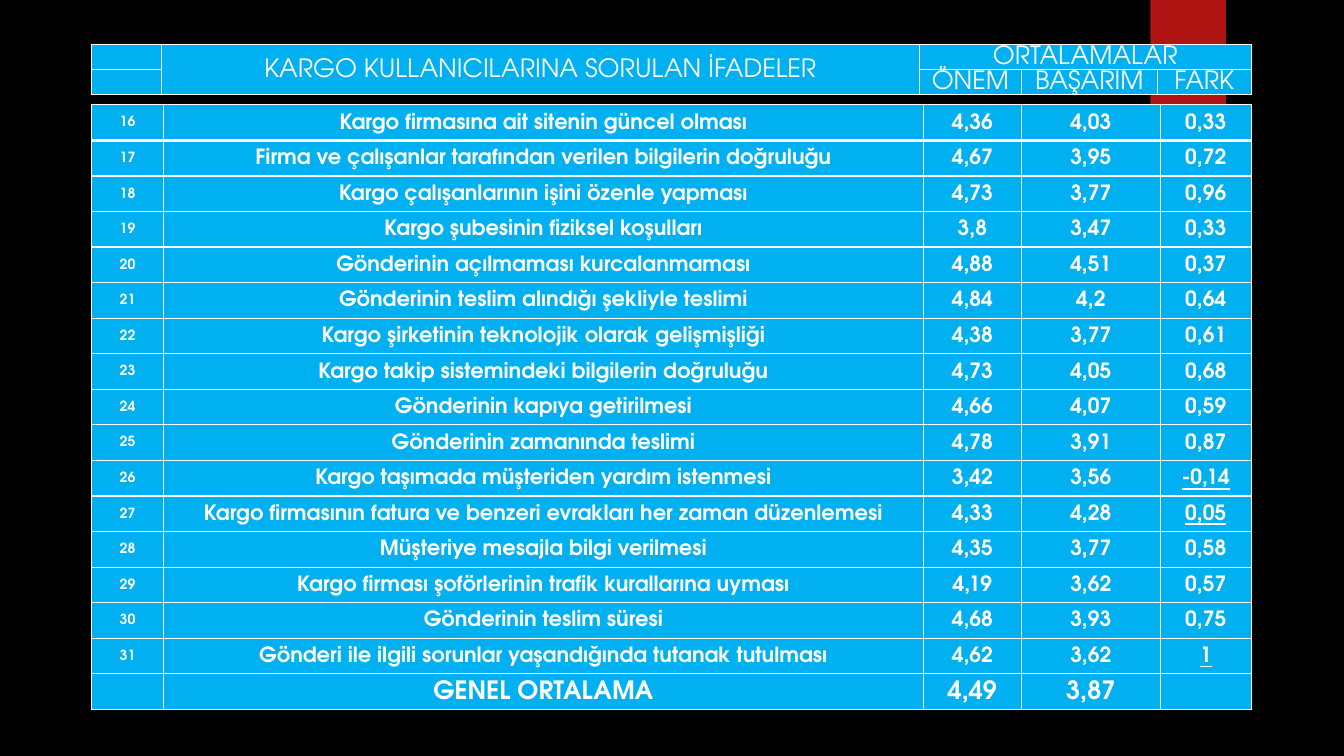
from lxml import etree
from pptx import Presentation
from pptx.dml.color import RGBColor
from pptx.enum import shapes, text
from pptx.oxml import parse_xml
from pptx.oxml.ns import nsdecls, qn
from pptx.util import Inches, Pt

BLACK = RGBColor(0x00, 0x00, 0x00)
WHITE = RGBColor(0xFF, 0xFF, 0xFF)
RED = RGBColor(0xB0, 0x15, 0x13)
BLUE = RGBColor(0x00, 0xB0, 0xF0)
TEAL = RGBColor(0x50, 0xB9, 0xC1)
FONT = "TeX Gyre Adventor"

BODY_COLS = [0.71, 7.54, 0.97, 1.38, 0.9]
HEAD_COLS = [0.69, 7.52, 1.01, 1.35, 0.93]
FIRST_NUMBER = 16
STATEMENTS = [
    ("Kargo firmasına ait sitenin güncel olması", "4,36", "4,03", "0,33"),
    ("Firma ve çalışanlar tarafından verilen bilgilerin doğruluğu", "4,67", "3,95", "0,72"),
    ("Kargo çalışanlarının işini özenle yapması", "4,73", "3,77", "0,96"),
    ("Kargo şubesinin fiziksel koşulları", "3,8", "3,47", "0,33"),
    ("Gönderinin açılmaması kurcalanmaması", "4,88", "4,51", "0,37"),
    ("Gönderinin teslim alındığı şekliyle teslimi", "4,84", "4,2", "0,64"),
    ("Kargo şirketinin teknolojik olarak gelişmişliği", "4,38", "3,77", "0,61"),
    ("Kargo takip sistemindeki bilgilerin doğruluğu", "4,73", "4,05", "0,68"),
    ("Gönderinin kapıya getirilmesi", "4,66", "4,07", "0,59"),
    ("Gönderinin zamanında teslimi", "4,78", "3,91", "0,87"),
    ("Kargo taşımada müşteriden yardım istenmesi", "3,42", "3,56", "-0,14"),
    ("Kargo firmasının fatura ve benzeri evrakları her zaman düzenlemesi", "4,33", "4,28", "0,05"),
    ("Müşteriye mesajla bilgi verilmesi", "4,35", "3,77", "0,58"),
    ("Kargo firması şoförlerinin trafik kurallarına uyması", "4,19", "3,62", "0,57"),
    ("Gönderinin teslim süresi", "4,68", "3,93", "0,75"),
    ("Gönderi ile ilgili sorunlar yaşandığında tutanak tutulması", "4,62", "3,62", "1"),
]
OVERALL = ("", "GENEL ORTALAMA", "4,49", "3,87", "")
UNDERLINED = {"-0,14", "0,05", "1"}


def set_borders(cell, bottom=1):
    tc_pr = cell._tc.get_or_add_tcPr()
    widths = {"lnL": 1, "lnR": 1, "lnT": 1, "lnB": bottom}
    for i, (side, width) in enumerate(widths.items()):
        ln = etree.Element(qn("a:" + side), w=str(Pt(width)))
        fill = etree.SubElement(ln, qn("a:solidFill"))
        etree.SubElement(fill, qn("a:srgbClr"), val=str(WHITE))
        tc_pr.insert(i, ln)


def style_cell(cell, words, size, bold=False, after=0, bottom=1):
    cell.fill.solid()
    cell.fill.fore_color.rgb = BLUE
    set_borders(cell, bottom)
    cell.vertical_anchor = text.MSO_ANCHOR.MIDDLE
    cell.margin_left = cell.margin_right = Inches(0.05)
    cell.margin_top = cell.margin_bottom = 0
    p = cell.text_frame.paragraphs[0]
    p.alignment = text.PP_ALIGN.CENTER
    p.line_spacing = 1.07
    p.space_after = Pt(after)
    if not words:
        p.font.size = Pt(10)
        return
    p.text = words
    font = p.runs[0].font
    font.name, font.size, font.bold = FONT, Pt(size), bold
    font.color.rgb = WHITE
    if words in UNDERLINED:
        font.underline = True


def add_grid(slide, left, top, height, cols, row_count):
    table = slide.shapes.add_table(row_count, len(cols), Inches(left), Inches(top),
                                   Inches(sum(cols)), Inches(height)).table
    table.first_row = table.horz_banding = False
    for column, width in zip(table.columns, cols):
        column.width = Inches(width)
    for row in table.rows:
        row.height = Inches(height / row_count)
    return table


def add_backdrop(slide):
    slide.background.fill.solid()
    slide.background.fill.fore_color.rgb = BLACK

    # Faint round glow
    glow = slide.shapes.add_shape(shapes.MSO_SHAPE.OVAL, Inches(9.41), Inches(1.83),
                                  Inches(3.08), Inches(3.08))
    stops = "".join(
        f'<a:gs pos="{pos}000"><a:srgbClr val="{TEAL}"><a:alpha val="{alpha}000"/></a:srgbClr></a:gs>'
        for pos, alpha in [(0, 7), (36, 6), (69, 0)])
    glow._element.spPr.find(qn("a:prstGeom")).addnext(parse_xml(
        f'<a:gradFill {nsdecls("a")}><a:gsLst>{stops}</a:gsLst><a:path path="circle">'
        '<a:fillToRect l="50000" t="50000" r="50000" b="50000"/></a:path></a:gradFill>'))

    # Red ribbon
    ribbon = slide.shapes.add_shape(shapes.MSO_SHAPE.RECTANGLE, Inches(11.41), 0,
                                    Inches(0.75), Inches(1.25))
    ribbon.fill.solid()
    ribbon.fill.fore_color.rgb = RED
    for sp in (glow, ribbon):
        sp.line.fill.background()
        sp.shadow.inherit = False


def add_statements(slide, left, top, height):
    rows = [(str(n), *row) for n, row in enumerate(STATEMENTS, FIRST_NUMBER)] + [OVERALL]
    table = add_grid(slide, left, top, height, BODY_COLS, len(rows))
    for i, row in enumerate(rows):
        is_total = row is OVERALL
        for j, words in enumerate(row):
            size = 18 if is_total else 10 if j == 0 else 15
            style_cell(table.cell(i, j), words, size, bold=True,
                       after=0 if is_total else 8, bottom=3 if i == 0 else 1)


def add_heading(slide, left, top, height):
    rows = [("", "KARGO KULLANICILARINA SORULAN İFADELER", "ORTALAMALAR", "", ""),
            ("", "", "ÖNEM", "BAŞARIM", "FARK")]
    table = add_grid(slide, left, top, height, HEAD_COLS, len(rows))
    for i, row in enumerate(rows):
        for j, words in enumerate(row):
            style_cell(table.cell(i, j), words, 18)
    table.cell(0, 1).merge(table.cell(1, 1))
    table.cell(0, 2).merge(table.cell(0, 4))


def main():
    prs = Presentation()
    prs.slide_width, prs.slide_height = Inches(13.33), Inches(7.5)
    slide = prs.slides.add_slide(prs.slide_layouts[6])
    add_backdrop(slide)
    add_statements(slide, 0.91, 1.04, 6)
    add_heading(slide, 0.91, 0.44, 0.5)
    prs.save("out.pptx")


if __name__ == "__main__":
    main()
